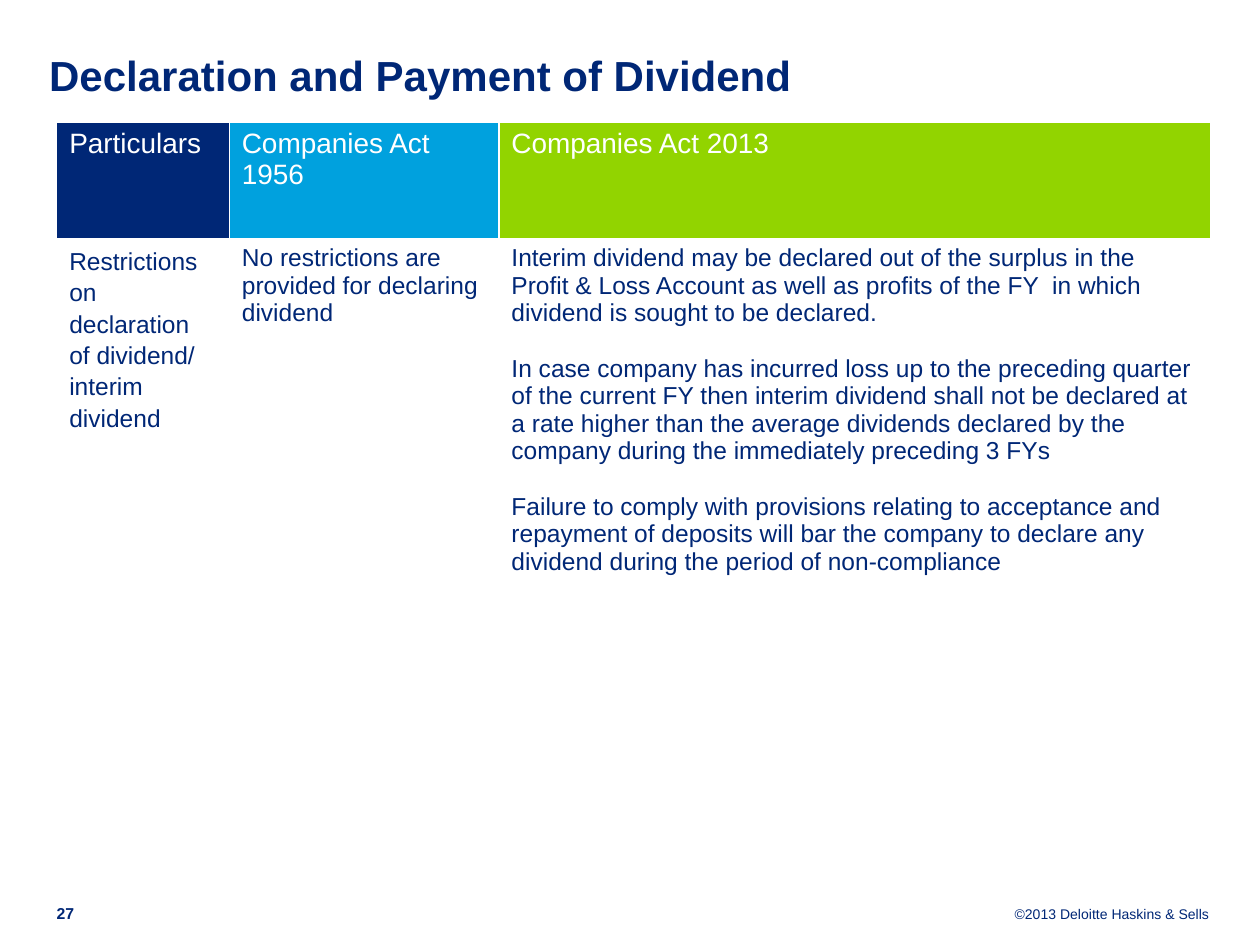
"""Builds the slide comparing dividend rules in two Companies Acts."""
from lxml.etree import SubElement
from pptx import Presentation
from pptx.dml.color import RGBColor
from pptx.enum.text import MSO_ANCHOR, PP_ALIGN
from pptx.oxml.ns import qn
from pptx.util import Inches, Pt

COLORS = {"navy": "002776", "blue": "00A1DE", "green": "92D400", "white": "FFFFFF"}
NO_STYLE = "{2D5ABB26-0587-4C30-8999-92F81FD0307C}"


def style(para, size, color, bold=False):
    para.font.name = "Arial"
    para.font.size = Pt(size)
    para.font.bold = bold
    para.font.color.rgb = RGBColor.from_string(COLORS[color])


def add_text(left, top, width, height, text, size, bold, wrap=True):
    box = page.shapes.add_textbox(Inches(left), Inches(top), Inches(width), Inches(height))
    frame = box.text_frame
    frame.margin_left = frame.margin_top = frame.margin_right = frame.margin_bottom = 0
    frame.word_wrap = wrap
    frame.vertical_anchor = MSO_ANCHOR.TOP
    para = frame.paragraphs[0]
    para.text = text
    style(para, size, "navy", bold)
    return para


deck = Presentation()
deck.slide_width, deck.slide_height = Inches(10), Inches(7.5)
page = deck.slides.add_slide(deck.slide_layouts[6])

copyright_line = add_text(8.04, 7.19, 1.56, 0.13, "©2013 Deloitte Haskins & Sells", 8, False, wrap=False)
copyright_line.alignment = PP_ALIGN.RIGHT
add_text(0.39, 0.39, 9.21, 0.69, "Declaration and Payment of Dividend", 24, True)
page_number = add_text(0.45, 7.17, 0.31, 0.16, "27", 9, True)
page_number.line_spacing = Pt(10.8)

columns = [
    (1.37, "navy", "Particulars", ["Restrictions on declaration of dividend/ interim dividend"]),
    (2.14, "blue", "Companies Act 1956", ["No restrictions are provided for declaring dividend"]),
    (5.65, "green", "Companies Act 2013", [
        "Interim dividend may be declared out of the surplus in the Profit & Loss Account "
        "as well as profits of the FY  in which dividend is sought to be declared.",
        "In case company has incurred loss up to the preceding quarter of the current FY then "
        "interim dividend shall not be declared at a rate higher than the average dividends "
        "declared by the company during the immediately preceding 3 FYs",
        "Failure to comply with provisions relating to acceptance and repayment of deposits "
        "will bar the company to declare any dividend during the period of non-compliance",
    ]),
]

table_frame = page.shapes.add_table(2, 3, Inches(0.45), Inches(0.97), Inches(9.16), Inches(5.45))
table = table_frame.table
table.first_row = table.horz_banding = False
table._tbl.tblPr.find(qn("a:tableStyleId")).text = NO_STYLE
table.rows[0].height, table.rows[1].height = Inches(0.92), Inches(4.53)

for index, (width, fill, heading, passages) in enumerate(columns):
    table.columns[index].width = Inches(width)
    header, body = table.cell(0, index), table.cell(1, index)

    properties = header._tc.get_or_add_tcPr()
    for side in ("a:lnL", "a:lnR", "a:lnT"):
        line = SubElement(properties, qn(side), w=str(Pt(1)))
        SubElement(SubElement(line, qn("a:solidFill")), qn("a:srgbClr"), val=COLORS["white"])
    header.fill.solid()
    header.fill.fore_color.rgb = RGBColor.from_string(COLORS[fill])
    header.text = heading
    style(header.text_frame.paragraphs[0], 16, "white")

    body.fill.background()
    body.text = "\n".join(passages)
    for number, para in enumerate(body.text_frame.paragraphs):
        style(para, 14, "navy")
        if number:
            para.space_before = Pt(16)

table.cell(1, 0).text_frame.paragraphs[0].line_spacing = 1.14

deck.save("out.pptx")
